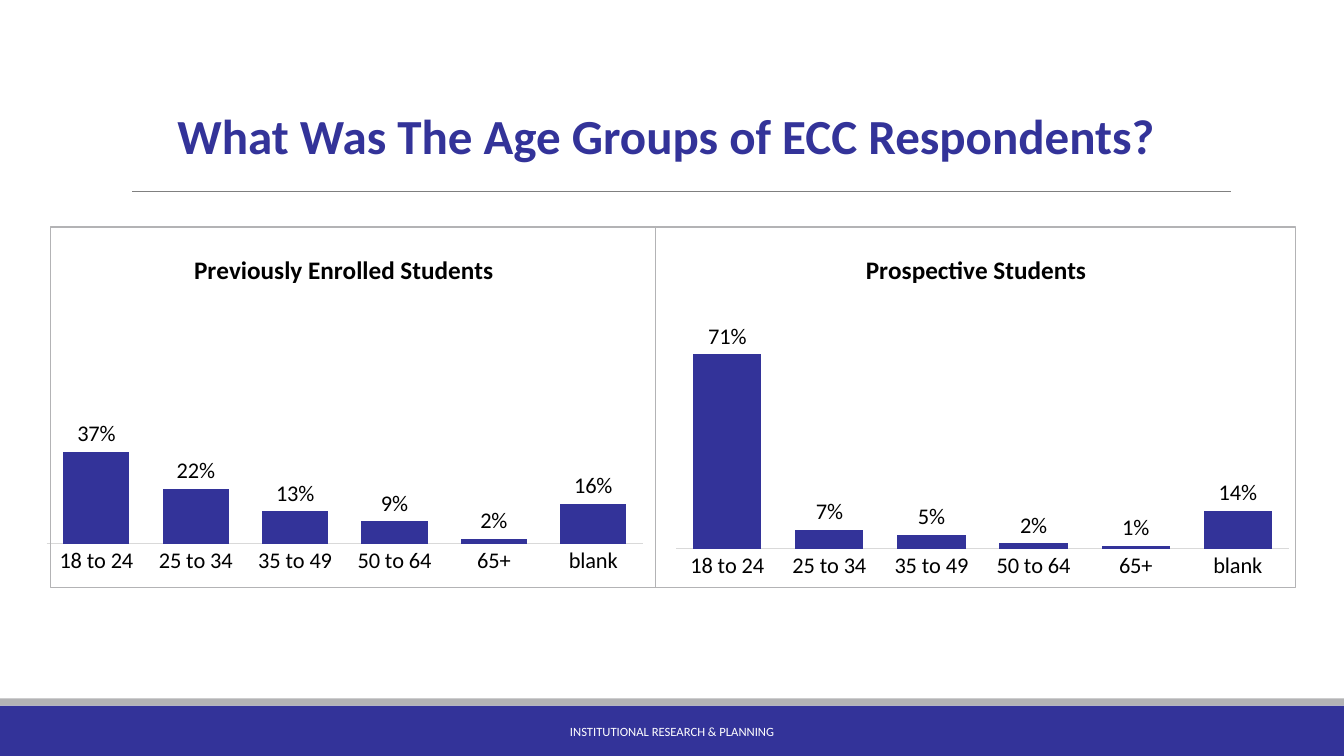
import pptx
import pptx.chart.data
import pptx.dml.color
import pptx.enum.chart
import pptx.enum.shapes
import pptx.enum.text
import pptx.oxml
import pptx.oxml.ns
import pptx.util
from pptx.util import Inches

COLORS = {
    "navy": "333399",
    "silver": "B3B3B5",
    "gray": "808080",
    "axis": "D9D9D9",
    "black": "000000",
    "white": "FFFFFF",
}
AGE_GROUPS = ["18 to 24", "25 to 34", "35 to 49", "50 to 64", "65+", "blank"]


def color(name):
    return pptx.dml.color.RGBColor.from_string(COLORS[name])


def manual_layout(x, y, width=None, height=None, inner=False):
    """Return a c:layout element placed by fractions of the chart area."""
    parts = ['<c:layoutTarget val="inner"/>'] if inner else []
    parts += ['<c:xMode val="edge"/>', '<c:yMode val="edge"/>']
    for tag, value in zip("xywh", (x, y, width, height)):
        if value is not None:
            parts.append(f'<c:{tag} val="{value}"/>')
    return pptx.oxml.parse_xml(
        f'<c:layout {pptx.oxml.ns.nsdecls("c")}><c:manualLayout>'
        f'{"".join(parts)}</c:manualLayout></c:layout>'
    )


def replace_layout(parent, layout, index):
    for old_layout in parent.findall(pptx.oxml.ns.qn("c:layout")):
        parent.remove(old_layout)
    parent.insert(index, layout)


class SlideBuilder:
    font_name = "Calibri"

    def __init__(self, presentation):
        self.slide = presentation.slides.add_slide(presentation.slide_layouts[5])

    def set_font(self, font, size, color_name, bold=False):
        font.name = self.font_name
        font.size = pptx.util.Pt(size)
        font.bold = bold
        font.color.rgb = color(color_name)

    def set_text(self, shape, text, size, color_name, anchor, bold=False):
        frame = shape.text_frame
        frame.word_wrap = True
        frame.auto_size = pptx.enum.text.MSO_AUTO_SIZE.NONE
        frame.vertical_anchor = anchor
        paragraph = frame.paragraphs[0]
        paragraph.text = text
        paragraph.alignment = pptx.enum.text.PP_ALIGN.CENTER
        self.set_font(paragraph.font, size, color_name, bold)

    def title(self, text, left, top, width, height):
        shape = self.slide.shapes.title
        shape.left, shape.top = Inches(left), Inches(top)
        shape.width, shape.height = Inches(width), Inches(height)
        self.set_text(shape, text, 35, "navy", pptx.enum.text.MSO_ANCHOR.TOP, True)

    def text(self, text, left, top, width, height):
        shape = self.slide.shapes.add_textbox(
            Inches(left), Inches(top), Inches(width), Inches(height))
        self.set_text(shape, text, 9, "white", pptx.enum.text.MSO_ANCHOR.MIDDLE)

    def rectangle(self, left, top, width, height, fill=None, line=None):
        shape = self.slide.shapes.add_shape(
            pptx.enum.shapes.MSO_SHAPE.RECTANGLE,
            Inches(left), Inches(top), Inches(width), Inches(height))
        shape.shadow.inherit = False
        if fill:
            shape.fill.solid()
            shape.fill.fore_color.rgb = color(fill)
        else:
            shape.fill.background()
        if line:
            shape.line.color.rgb = color(line)
            shape.line.width = pptx.util.Pt(1.25)
        else:
            shape.line.fill.background()

    def line(self, start_x, start_y, end_x, end_y, color_name, weight):
        connector = self.slide.shapes.add_connector(
            pptx.enum.shapes.MSO_CONNECTOR.STRAIGHT,
            Inches(start_x), Inches(start_y), Inches(end_x), Inches(end_y))
        connector.line.color.rgb = color(color_name)
        connector.line.width = pptx.util.Pt(weight)
        connector.element.spPr.append(pptx.oxml.parse_xml(
            f'<a:effectLst {pptx.oxml.ns.nsdecls("a")}/>'))

    def column_chart(self, title, values, bounds, title_layout, plot_layout):
        data = pptx.chart.data.CategoryChartData(number_format="0%")
        data.categories = AGE_GROUPS
        data.add_series("Series 1", values)
        chart = self.slide.shapes.add_chart(
            pptx.enum.chart.XL_CHART_TYPE.COLUMN_CLUSTERED,
            *map(Inches, bounds), data).chart
        self.set_font(chart.font, 16, "black")
        chart.has_legend = False

        chart.has_title = True
        paragraph = chart.chart_title.text_frame.paragraphs[0]
        paragraph.text = title
        self.set_font(paragraph.font, 18, "black", True)

        category_axis = chart.category_axis
        category_axis.major_tick_mark = pptx.enum.chart.XL_TICK_MARK.NONE
        category_axis.format.line.color.rgb = color("axis")
        category_axis.format.line.width = pptx.util.Pt(0.75)
        self.set_font(category_axis.tick_labels.font, 16, "black")
        value_axis = chart.value_axis
        value_axis.minimum_scale, value_axis.maximum_scale = 0, 1
        value_axis.has_major_gridlines = False
        value_axis.visible = False

        plot = chart.plots[0]
        plot.gap_width, plot.overlap = 50, -27
        plot.vary_by_categories = False
        fill = plot.series[0].format.fill
        fill.solid()
        fill.fore_color.rgb = color("navy")
        plot.has_data_labels = True
        labels = plot.data_labels
        labels.show_value = True
        labels.number_format, labels.number_format_is_linked = "0%", False
        labels.position = pptx.enum.chart.XL_LABEL_POSITION.OUTSIDE_END
        self.set_font(labels.font, 16, "black")

        chart_element = chart._chartSpace.find(pptx.oxml.ns.qn("c:chart"))
        replace_layout(chart_element.find(pptx.oxml.ns.qn("c:title")),
                       manual_layout(*title_layout), 1)
        replace_layout(chart_element.find(pptx.oxml.ns.qn("c:plotArea")),
                       manual_layout(*plot_layout, inner=True), 0)


def main():
    presentation = pptx.Presentation()
    presentation.slide_width = Inches(13.33)
    presentation.slide_height = Inches(7.5)
    builder = SlideBuilder(presentation)

    builder.rectangle(0, 7, 13.33, 0.5, fill="navy")
    builder.rectangle(0, 6.93, 13.33, 0.07, fill="silver")
    builder.line(1.31, 1.9, 12.21, 1.9, "gray", 0.5)
    builder.text("INSTITUTIONAL RESEARCH & PLANNING", 4.03, 7.06, 5.27, 0.4)
    builder.title("What Was The Age Groups of ECC Respondents? ", 1.09, 1, 11.15, 0.69)

    builder.column_chart(
        "Prospective Students", [0.71, 0.07, 0.05, 0.02, 0.01, 0.14],
        (6.58, 2, 6.33, 3.83), (0.31, 0.12), (0.02, 0.19, 0.96, 0.71))
    builder.column_chart(
        "Previously Enrolled Students", [0.37, 0.22, 0.13, 0.09, 0.02, 0.16],
        (0.34, 2.21, 6.16, 3.58), (0.25, 0.07), (0.02, 0.2, 0.96, 0.69))
    builder.rectangle(0.5, 2.25, 12.35, 3.58, line="silver")
    builder.line(6.5, 2.25, 6.5, 5.83, "silver", 1)

    presentation.save("out.pptx")


if __name__ == "__main__":
    main()
